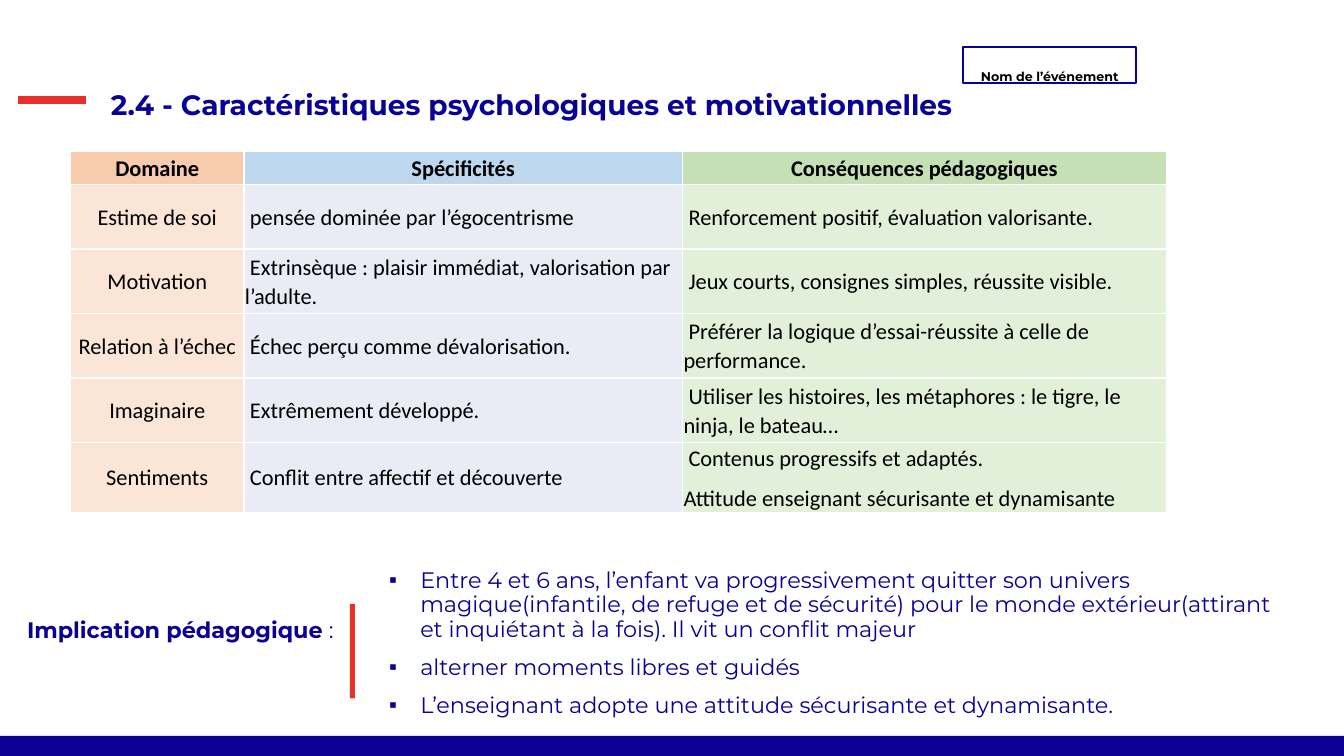
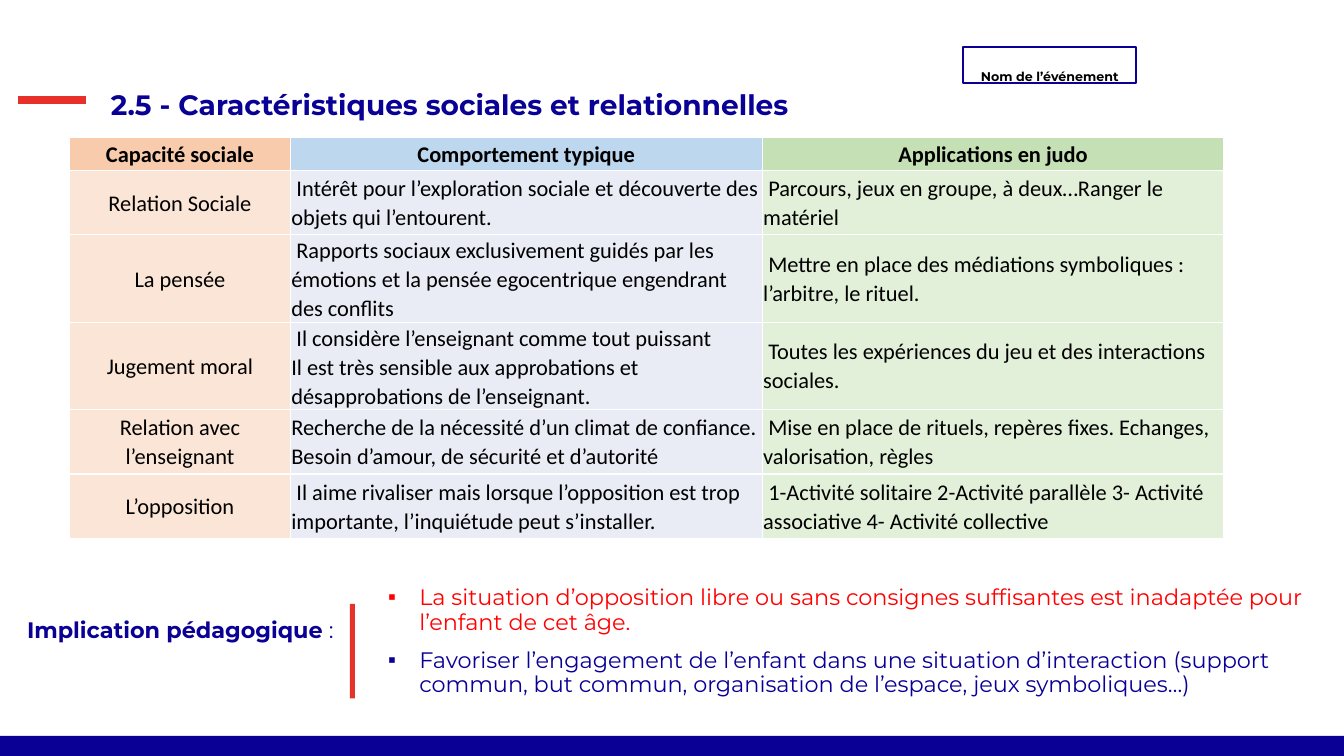
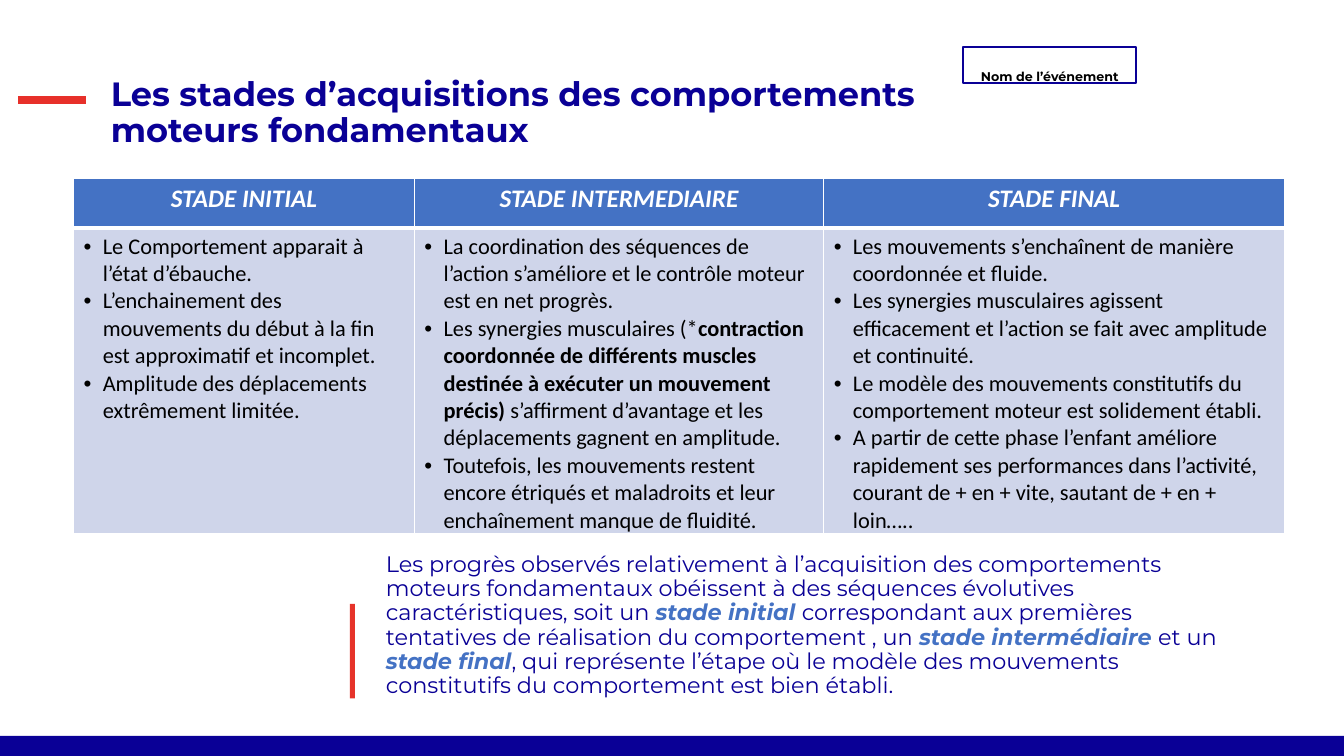
import dataclasses

import lxml.etree
import pptx
import pptx.dml.color
import pptx.enum.shapes
import pptx.enum.text
import pptx.oxml.ns
import pptx.util

Inches = pptx.util.Inches
Pt = pptx.util.Pt
ALIGN = pptx.enum.text.PP_ALIGN
ANCHOR = pptx.enum.text.MSO_ANCHOR
qn = pptx.oxml.ns.qn


# Theme: colours, fonts and type sizes
@dataclasses.dataclass(frozen=True)
class Theme:
    navy: str = "0A0096"
    title_navy: str = "090095"
    red_dash: str = "E7302A"
    red_bar: str = "E6332A"
    alert: str = "FF0000"
    blue: str = "4472C4"
    pale_blue: str = "CFD5EA"
    black: str = "000000"
    white: str = "FFFFFF"
    header_fills: tuple = ("F8CBAD", "BDD7EE", "C5E0B4")
    column_fills: tuple = ("FBE5D6", "E9EBF5", "E2F0D9")
    heading_font: str = "Montserrat"
    table_font: str = "Calibri"
    tag_size: int = 9
    body_size: int = 16
    stage_size: int = 18
    title_size: int = 20
    large_title_size: int = 24


THEME = Theme()


@dataclasses.dataclass(frozen=True)
class Style:
    size: int = THEME.body_size
    color: str = THEME.navy
    font: str = THEME.heading_font
    bold: bool = False
    italic: bool = False


@dataclasses.dataclass(frozen=True)
class Layout:
    align: object = ALIGN.LEFT
    spacing: float = 1.0
    before: int = 0
    after: int = 0
    bullet: str = ""
    indent: float = 0


BODY = Style()
STRONG = Style(bold=True)
ALERT = Style(color=THEME.alert)
STAGE = Style(color=THEME.blue, bold=True, italic=True)
CELL = Style(color=THEME.black, font=THEME.table_font)
CELL_BOLD = dataclasses.replace(CELL, bold=True)
STAGE_HEADER = Style(THEME.stage_size, THEME.white, THEME.table_font, True, True)
TITLE = Style(THEME.title_size, THEME.title_navy, bold=True)
LARGE_TITLE = Style(THEME.large_title_size, bold=True)
TAG = Style(THEME.tag_size, THEME.black, bold=True)

PLAIN_TEXT = Layout(spacing=0.9, before=10)
BULLETED_TEXT = dataclasses.replace(PLAIN_TEXT, bullet="▪", indent=0.31)
CELL_LEFT = Layout(spacing=1.06, after=8)
CELL_CENTRED = dataclasses.replace(CELL_LEFT, align=ALIGN.CENTER)
STAGE_CENTRED = Layout(align=ALIGN.CENTER)
STAGE_BULLETS = Layout(bullet="•", indent=0.19)


def rgb(color):
    return pptx.dml.color.RGBColor.from_string(color)


# Text
def add_bullet(para, layout):
    properties = para._p.get_or_add_pPr()
    properties.set("marL", str(Inches(layout.indent)))
    properties.set("indent", str(-Inches(layout.indent)))
    lxml.etree.SubElement(properties, qn("a:buFont")).set("typeface", "Arial")
    lxml.etree.SubElement(properties, qn("a:buChar")).set("char", layout.bullet)


def add_span(para, text, style):
    for number, line in enumerate(text.split("\n")):
        if number:
            para.add_line_break()
        span = para.add_run()
        span.text = line
        span.font.name = style.font
        span.font.size = Pt(style.size)
        span.font.bold = style.bold
        span.font.italic = style.italic
        span.font.color.rgb = rgb(style.color)


def write(frame, paragraphs, style, layout):
    """Each paragraph is a string or a list of strings and (string, style) pairs."""
    for number, spans in enumerate(paragraphs):
        para = frame.add_paragraph() if number else frame.paragraphs[0]
        if layout.bullet:
            add_bullet(para, layout)
        para.alignment = layout.align
        para.line_spacing = layout.spacing
        para.space_before = Pt(layout.before if number else 0)
        para.space_after = Pt(layout.after)
        for span in [spans] if isinstance(spans, str) else spans:
            text, span_style = (span, style) if isinstance(span, str) else span
            add_span(para, text, span_style)


def add_text(page, place, paragraphs, style=BODY, layout=PLAIN_TEXT):
    box = page.shapes.add_textbox(*map(Inches, place))
    box.text_frame.word_wrap = True
    write(box.text_frame, paragraphs, style, layout)


# Shapes
def add_rectangle(page, place, fill=None, line=None):
    box = page.shapes.add_shape(
        pptx.enum.shapes.MSO_SHAPE.RECTANGLE, *map(Inches, place))
    box.shadow.inherit = False
    if fill:
        box.fill.solid()
        box.fill.fore_color.rgb = rgb(fill)
    else:
        box.fill.background()
    if line:
        box.line.color.rgb = rgb(line)
        box.line.width = Pt(1.5)
    else:
        box.line.fill.background()
    return box


def add_dash(page, left, right, top):
    dash = page.shapes.add_connector(
        pptx.enum.shapes.MSO_CONNECTOR.STRAIGHT,
        Inches(left), Inches(top), Inches(right), Inches(top))
    dash.line.color.rgb = rgb(THEME.red_dash)
    dash.line.width = Pt(6)
    lxml.etree.SubElement(dash._element.spPr, qn("a:effectLst"))


# Tables
def add_borders(cell, widths):
    properties = cell._tc.get_or_add_tcPr()
    for side, width in zip(("L", "R", "T", "B"), widths):
        border = lxml.etree.SubElement(properties, qn("a:ln" + side))
        border.set("w", str(Pt(width)))
        fill = lxml.etree.SubElement(border, qn("a:solidFill"))
        lxml.etree.SubElement(fill, qn("a:srgbClr")).set("val", THEME.white)


def fill_cell(cell, content, fill, style, layout, borders=(1, 1, 1, 1)):
    add_borders(cell, borders)
    cell.fill.solid()
    cell.fill.fore_color.rgb = rgb(fill)
    write(cell.text_frame, content, style, layout)


def add_grid(page, left, top, widths, heights):
    table = page.shapes.add_table(
        len(heights), len(widths), Inches(left), Inches(top),
        Inches(sum(widths)), Inches(sum(heights))).table
    table.horz_banding = False
    for column, width in zip(table.columns, widths):
        column.width = Inches(width)
    for row, height in zip(table.rows, heights):
        row.height = Inches(height)
    return table


def add_trait_table(page, left, top, widths, rows):
    heights = [0.33] + [0.64] * (len(rows) - 1)
    table = add_grid(page, left, top, widths, heights)
    for r, row in enumerate(rows):
        fills = THEME.column_fills if r else THEME.header_fills
        for c, content in enumerate(row):
            cell = table.cell(r, c)
            cell.vertical_anchor = ANCHOR.MIDDLE
            cell.margin_left = cell.margin_right = Inches(0.01)
            cell.margin_top = cell.margin_bottom = Inches(0.01)
            fill_cell(cell, content.split("\n\n"), fills[c],
                      CELL if r else CELL_BOLD,
                      CELL_LEFT if r and c else CELL_CENTRED)


def add_stage_table(page, left, top, widths, stages):
    table = add_grid(page, left, top, widths, [0.49, 2.99])
    for c, (name, points) in enumerate(stages):
        fill_cell(table.cell(0, c), [name], THEME.blue, STAGE_HEADER,
                  STAGE_CENTRED, (1, 1, 1, 3))
        fill_cell(table.cell(1, c), points, THEME.pale_blue, CELL,
                  STAGE_BULLETS, (1, 1, 3, 1))


# Parts shared by all pages
def add_page(deck):
    page = deck.slides.add_slide(deck.slide_layouts[6])
    add_rectangle(page, (-0.08, 7.3, 13.46, 0.2), fill=THEME.navy)
    tag = add_rectangle(page, (9.55, 0.47, 1.72, 0.35), line=THEME.navy)
    frame = tag.text_frame
    frame.word_wrap = True
    frame.vertical_anchor = ANCHOR.MIDDLE
    frame.margin_left = frame.margin_right = 0
    frame.margin_top = frame.margin_bottom = 0
    write(frame, ["Nom de l’événement"], TAG,
          Layout(align=ALIGN.CENTER, spacing=2.5, after=8))
    add_dash(page, 0.18, 0.85, 0.99)
    add_rectangle(page, (3.47, 5.99, 0.05, 0.94), fill=THEME.red_bar)
    return page


def add_trait_page(deck, title):
    page = add_page(deck)
    add_text(page, (1, 0.86, 8.82, 0.49), [title], TITLE)
    add_text(page, (0.17, 6.09, 3.29, 0.49),
             [[("Implication pédagogique", STRONG), " :"]])
    return page


# Pages
def build_psychology(deck):
    page = add_trait_page(
        deck, "2.4 - Caractéristiques psychologiques et motivationnelles")
    add_text(page, (3.76, 5.6, 9.21, 0.74), [
        "Entre 4 et 6 ans, l’enfant va progressivement quitter son univers "
        "magique(infantile, de refuge et de sécurité) pour le monde "
        "extérieur(attirant et inquiétant à la fois). Il vit un conflit majeur",
        "alterner moments libres et guidés",
        "L’enseignant adopte une attitude sécurisante et dynamisante.",
    ], layout=BULLETED_TEXT)
    add_trait_table(page, 0.7, 1.5, (1.72, 4.35, 4.8), [
        ("Domaine", "Spécificités", "Conséquences pédagogiques"),
        ("Estime de soi", " pensée dominée par l’égocentrisme",
         " Renforcement positif, évaluation valorisante."),
        ("Motivation",
         " Extrinsèque : plaisir immédiat, valorisation par l’adulte.",
         " Jeux courts, consignes simples, réussite visible."),
        ("Relation à l’échec", " Échec perçu comme dévalorisation.",
         " Préférer la logique d’essai-réussite à celle de performance."),
        ("Imaginaire", " Extrêmement développé.",
         " Utiliser les histoires, les métaphores : le tigre, le ninja, "
         "le bateau…"),
        ("Sentiments", " Conflit entre affectif et découverte",
         " Contenus progressifs et adaptés.\n\n"
         "Attitude enseignant sécurisante et dynamisante"),
    ])


def build_social(deck):
    page = add_trait_page(
        deck, "2.5 - Caractéristiques sociales et relationnelles")
    add_text(page, (3.75, 5.77, 9.42, 0.74), [
        [("La situation d’opposition libre ou sans consignes suffisantes est "
          "inadaptée pour l’enfant de cet âge.", ALERT)],
        "Favoriser l’engagement de l’enfant dans une situation d’interaction "
        "(support commun, but commun, organisation de l’espace, jeux "
        "symboliques…)",
    ], layout=BULLETED_TEXT)
    add_trait_table(page, 0.69, 1.36, (2.19, 4.68, 4.58), [
        ("Capacité sociale", "Comportement typique", "Applications en judo"),
        ("Relation Sociale",
         " Intérêt pour l’exploration sociale et découverte des objets qui "
         "l’entourent.",
         " Parcours, jeux en groupe, à deux…Ranger le matériel"),
        ("La pensée",
         " Rapports sociaux exclusivement guidés par les émotions et la pensée "
         "egocentrique engendrant des conflits",
         " Mettre en place des médiations symboliques : l’arbitre, le rituel."),
        ("Jugement moral",
         " Il considère l’enseignant comme tout puissant\nIl est très sensible "
         "aux approbations et désapprobations de l’enseignant.",
         " Toutes les expériences du jeu et des interactions sociales."),
        ("Relation avec l’enseignant",
         "Recherche de la nécessité d’un climat de confiance. Besoin d’amour, "
         "de sécurité et d’autorité",
         " Mise en place de rituels, repères fixes. Echanges, valorisation, "
         "règles"),
        ("L’opposition",
         " Il aime rivaliser mais lorsque l’opposition est trop importante, "
         "l’inquiétude peut s’installer.",
         " 1-Activité solitaire 2-Activité parallèle 3- Activité associative "
         "4- Activité collective"),
    ])


def build_stages(deck):
    page = add_page(deck)
    add_text(page, (1, 0.72, 8.82, 0.67),
             ["Les stades d’acquisitions des comportements moteurs "
              "fondamentaux"], LARGE_TITLE)
    add_text(page, (3.73, 5.44, 8.7, 0.74), [[
        "Les progrès observés relativement à l’acquisition des comportements "
        "moteurs fondamentaux obéissent à des séquences évolutives "
        "caractéristiques, soit un ",
        ("stade initial ", STAGE),
        "correspondant aux premières tentatives de réalisation du "
        "comportement , un ",
        ("stade intermédiaire ", STAGE),
        "et un ",
        ("stade final", STAGE),
        ", qui représente l’étape où le modèle des mouvements constitutifs du "
        "comportement est bien établi.",
    ]])
    add_stage_table(page, 0.73, 1.77, (3.38, 4.06, 4.57), [
        ("STADE INITIAL", [
            "Le Comportement apparait à l’état d’ébauche.",
            "L’enchainement des mouvements du début à la fin est approximatif "
            "et incomplet.",
            "Amplitude des déplacements extrêmement limitée.",
        ]),
        ("STADE INTERMEDIAIRE", [
            "La coordination des séquences de l’action s’améliore et le "
            "contrôle moteur est en net progrès.",
            ["Les synergies musculaires (*",
             ("contraction coordonnée de différents muscles destinée à "
              "exécuter un mouvement précis) ", CELL_BOLD),
             "s’affirment d’avantage et les déplacements gagnent en "
             "amplitude."],
            "Toutefois, les mouvements restent encore étriqués et maladroits "
            "et leur enchaînement manque de fluidité.",
        ]),
        ("STADE FINAL", [
            "Les mouvements s’enchaînent de manière coordonnée et fluide.",
            "Les synergies musculaires agissent efficacement et l’action se "
            "fait avec amplitude et continuité.",
            "Le modèle des mouvements constitutifs du comportement moteur est "
            "solidement établi.",
            "A partir de cette phase l’enfant améliore rapidement ses "
            "performances dans l’activité, courant de + en + vite, sautant de "
            "+ en + loin…..",
        ]),
    ])


def main():
    deck = pptx.Presentation()
    deck.slide_width = Inches(13.33)
    deck.slide_height = Inches(7.5)
    build_psychology(deck)
    build_social(deck)
    build_stages(deck)
    deck.save("out.pptx")


if __name__ == "__main__":
    main()
